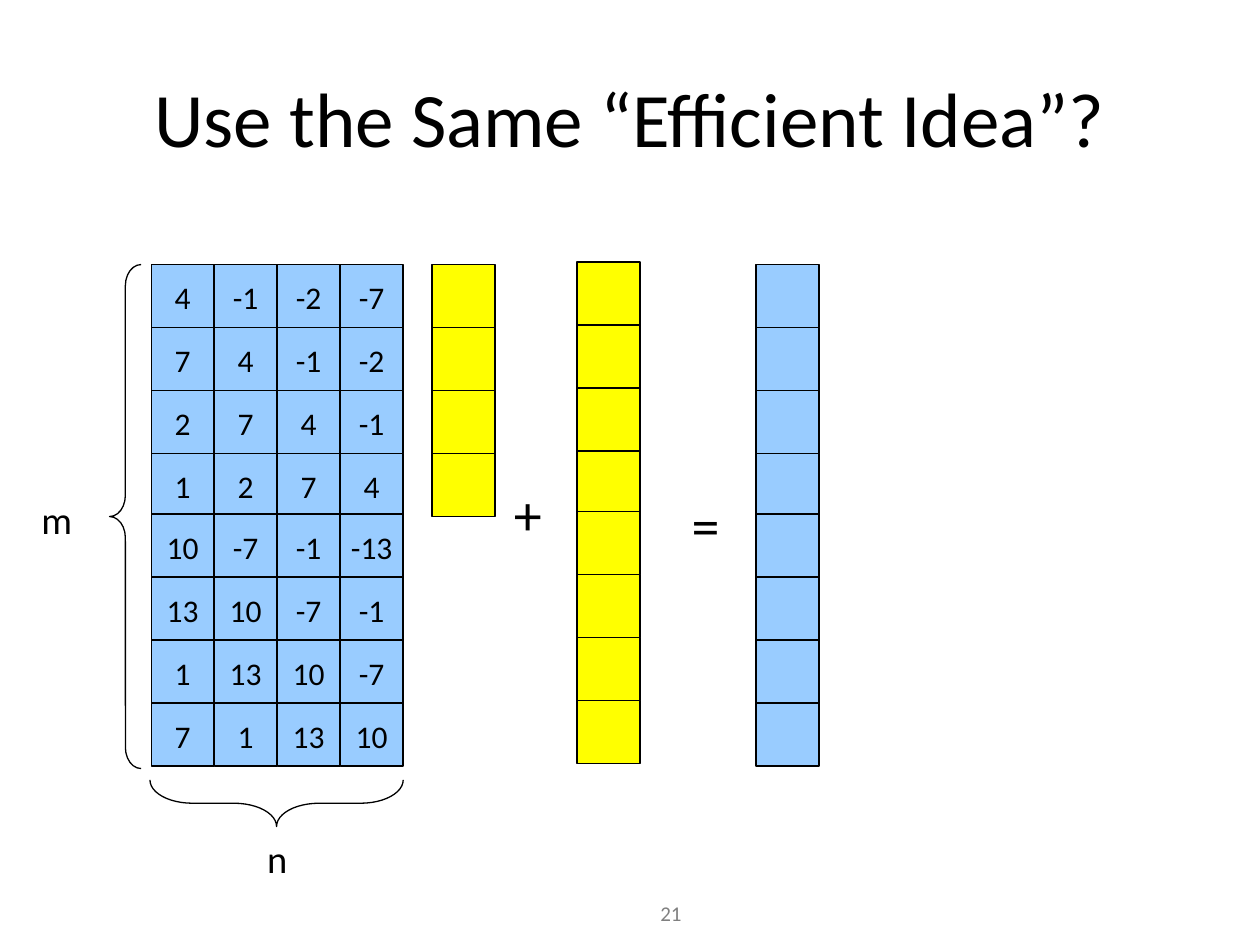
from pptx import Presentation
from pptx.dml.color import RGBColor
from pptx.enum.shapes import MSO_SHAPE
from pptx.enum.text import MSO_ANCHOR, PP_ALIGN
from pptx.util import Inches, Pt

CELL = 0.5
COLS, ROWS = 20, 15
HALF = 4
LAP = 0.04
COLORS = {"ink": "000000", "gray": "808080", "blue": "99CCFF", "yellow": "FFFF00"}
MATRIX = [
    ["4", "-1", "-2", "-7"],
    ["7", "4", "-1", "-2"],
    ["2", "7", "4", "-1"],
    ["1", "2", "7", "4"],
    ["10", "-7", "-1", "-13"],
    ["13", "10", "-7", "-1"],
    ["1", "13", "10", "-7"],
    ["7", "1", "13", "10"],
]


def place(box):
    return [Inches(part * CELL) for part in box]


def color(name):
    return RGBColor.from_string(COLORS[name])


def write(shape, text, size=18, ink="ink", align=PP_ALIGN.CENTER,
          anchor=MSO_ANCHOR.TOP, wrap=True, top=0.05):
    frame = shape.text_frame
    frame.word_wrap = wrap
    frame.vertical_anchor = anchor
    frame.margin_top = Inches(top)
    para = frame.paragraphs[0]
    para.alignment = align
    run = para.add_run()
    run.text = text
    run.font.name = "Calibri"
    run.font.size = Pt(size)
    run.font.color.rgb = color(ink)


def label(slide, box, text, **style):
    write(slide.shapes.add_textbox(*place(box)), text, **style)


def outline(slide, kind, box, fill=None):
    shape = slide.shapes.add_shape(kind, *place(box))
    shape.shadow.inherit = False
    if fill:
        shape.fill.solid()
        shape.fill.fore_color.rgb = color(fill)
    else:
        shape.fill.background()
    shape.line.color.rgb = color("ink")
    shape.line.width = Pt(0.75)
    return shape


def grid(slide, left, top, values, fill):
    for row, line in enumerate(values):
        drop = row - LAP * (row // HALF)
        for col, text in enumerate(line):
            box = (left + col, top + drop, 1, 1)
            cell = outline(slide, MSO_SHAPE.RECTANGLE, box, fill)
            if text:
                write(cell, text, anchor=MSO_ANCHOR.MIDDLE, wrap=False, top=0.07)


def vector(slide, left, top, count, fill):
    grid(slide, left, top, [[""]] * count, fill)


def brace(slide, box, curve, turn=0):
    shape = outline(slide, MSO_SHAPE.LEFT_BRACE, box)
    shape.adjustments[0] = curve
    shape.rotation = turn


def matrix(slide, left, top):
    grid(slide, left, top, MATRIX, "blue")
    brace(slide, (left - 0.66, top, 0.5, 8), 0.67)
    label(slide, (left - 2, top + 3.54, 1, 0.9), "m", size=22, top=0.07)
    brace(slide, (left + 1.62, top + 6.54, 0.74, 4.02), 0.91, 270)
    label(slide, (left + 1.5, top + 8.92, 1, 0.9), "n", size=22, top=0.07)


def formula(slide, left, top):
    matrix(slide, left, top)
    vector(slide, left + 4.46, top, HALF, "yellow")
    vector(slide, left + 6.76, top - 0.04, 2 * HALF, "yellow")
    vector(slide, left + 9.6, top, 2 * HALF, "blue")
    for shift, drop, sign in [(5.56, 3.32, "+"), (8.38, 3.48, "=")]:
        label(slide, (left + shift, top + drop, 0.94, 1.28), sign,
              size=32, align=PP_ALIGN.LEFT)


def main():
    deck = Presentation()
    deck.slide_width = Inches(COLS * CELL)
    deck.slide_height = Inches(ROWS * CELL)
    slide = deck.slides.add_slide(deck.slide_layouts[6])
    label(slide, (1, 0.6, COLS - 2, 2.5), "Use the Same “Efficient Idea”?",
          size=44, anchor=MSO_ANCHOR.MIDDLE)
    formula(slide, 2.4, 4.2)
    label(slide, (9.42, 14.2, 2.46, 0.8), "21", size=12, ink="gray")
    deck.save("out.pptx")


if __name__ == "__main__":
    main()
